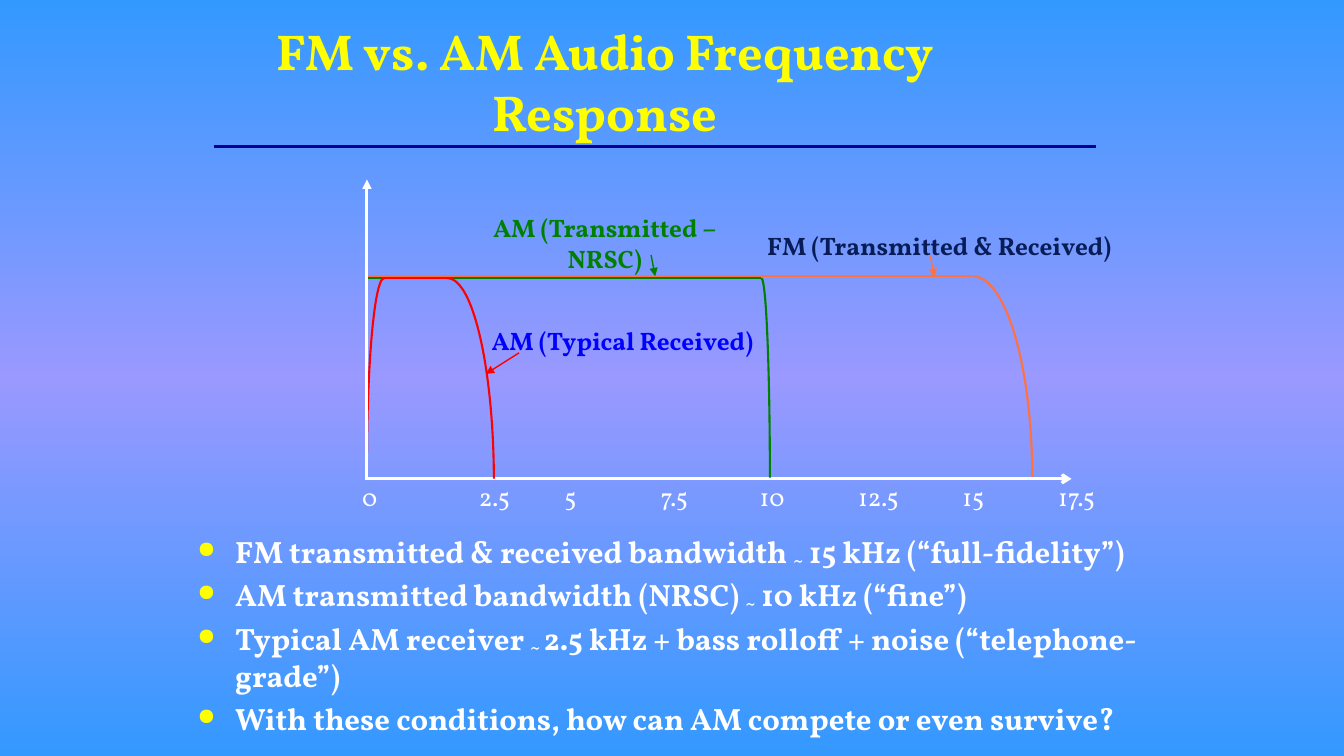
"""Build the slide comparing FM and AM audio frequency response."""
from copy import deepcopy
from dataclasses import dataclass

from lxml.etree import SubElement
from pptx import Presentation
from pptx.dml.color import RGBColor
from pptx.enum.shapes import MSO_CONNECTOR, MSO_SHAPE
from pptx.enum.text import MSO_ANCHOR, MSO_AUTO_SIZE, PP_ALIGN
from pptx.oxml.ns import qn
from pptx.slide import Slide
from pptx.text.text import TextFrame, _Run
from pptx.util import Pt


@dataclass(frozen=True)
class Theme:
    font: str = "Vollkorn"
    title_size: float = 36
    body_size: float = 22
    label_size: float = 18
    edge: str = "3399FF"
    middle: str = "9999FF"
    yellow: str = "FFFF00"
    white: str = "FFFFFF"
    navy: str = "000099"
    ink: str = "081D58"
    blue: str = "0000FF"
    orange: str = "FF7140"
    green: str = "008000"
    red: str = "FF0000"


@dataclass(frozen=True)
class Stroke:
    start: tuple[float, float]
    end: tuple[float, float]
    color: str
    width: float
    head: str = ""
    tail: str = ""


@dataclass(frozen=True)
class Rolloff:
    left: float
    top: float
    width: float
    height: float
    color: str
    flipped: bool = False
    angles: tuple[float, float] = (162, 0)


@dataclass(frozen=True)
class Label:
    text: str
    left: float
    top: float
    width: float
    height: float
    color: str
    size: float = 18
    bold: bool = True
    anchor: MSO_ANCHOR = MSO_ANCHOR.TOP
    grow: bool = True


THEME = Theme()
AXIS_X, AXIS_Y = 262.1, 342
FM_TOP, AM_TOP = 197.3, 198.7

TITLE = Label("FM vs. AM Audio Frequency Response", 118.8, 14.4, 626.4, 90,
              THEME.yellow, THEME.title_size, anchor=MSO_ANCHOR.BOTTOM, grow=False)
BULLETS = (
    ("FM transmitted & received bandwidth ", "~", " 15 kHz (“full-fidelity”)"),
    ("AM transmitted bandwidth (NRSC) ", "~", " 10 kHz (“fine”)"),
    ("Typical AM receiver ", "~ ", "2.5 kHz + bass rolloff + noise (“telephone-grade”)"),
    ("With these conditions, how can AM compete or even survive?",),
)
RULES_AND_BANDS = (
    Stroke((152.6, 104.4), (782.6, 104.4), THEME.navy, 2.25),
    Stroke((AXIS_X, AXIS_Y), (765.4, AXIS_Y), THEME.white, 2.25, tail="arrow"),
    Stroke((AXIS_X, FM_TOP), (694.1, FM_TOP), THEME.orange, 1.5),
    Stroke((AXIS_X, AM_TOP), (543.6, AM_TOP), THEME.green, 1.5),
    Stroke((274.3, AM_TOP), (319.7, AM_TOP), THEME.red, 1.5),
)
ROLLOFFS = (
    Rolloff(652.3, FM_TOP, 85, 286.6, THEME.orange),
    Rolloff(537.8, AM_TOP, 12.2, 285.1, THEME.green),
    Rolloff(AXIS_X, AM_TOP, 24.5, 270.7, THEME.red, flipped=True),
    Rolloff(286.6, AM_TOP, 66.2, 291.6, THEME.red, angles=(162, 213.18)),
)
CURVE_LABELS = (
    Label("FM (Transmitted & Received)", 537.8, 161.3, 266.4, 28.8, THEME.ink),
    Label("AM (Transmitted –NRSC)", 323.3, 148.3, 217.4, 51.1, THEME.green),
    Label("AM (Typical Received)", 342, 229, 205.2, 28.8, THEME.blue),
)
POINTERS = (
    Stroke((465.1, 182.2), (468, FM_TOP), THEME.green, 1, tail="triangle"),
    Stroke((664.6, 182.9), (667.4, 198), THEME.orange, 1, tail="triangle"),
    Stroke((370.8, 252), (347, 267.1), THEME.red, 1, tail="triangle"),
    Stroke((AXIS_X, 128.2), (AXIS_X, 342.7), THEME.white, 2.25, head="triangle"),
)
TICK_WIDTH = 57.6
TICK_CENTERS = {"0": 264.2, "2.5": 353.2, "5": 407.5, "7.5": 481.7,
                "10": 551.5, "12.5": 627.5, "15": 695.2, "17.5": 769}


def paint_background(page: Slide) -> None:
    """Fill the page with a vertical three-stop gradient."""
    fill = page.background.fill
    fill.gradient()
    fill.gradient_angle = 270
    stops = page.element.find(".//" + qn("a:gsLst"))
    stops.insert(1, deepcopy(stops[0]))
    colors = (THEME.edge, THEME.middle, THEME.edge)
    for stop, position, color in zip(fill.gradient_stops, (0, 0.5, 1), colors):
        stop.position = position
        stop.color.rgb = RGBColor.from_string(color)


def style_span(span: _Run, size: float, color: str, bold: bool) -> None:
    """Set the font of one run."""
    span.font.name = THEME.font
    span.font.size = Pt(size)
    span.font.bold = bold
    span.font.color.rgb = RGBColor.from_string(color)


def add_frame(page: Slide, left: float, top: float, width: float, height: float) -> TextFrame:
    """Add a wrapping text box and return its frame."""
    box = page.shapes.add_textbox(Pt(left), Pt(top), Pt(width), Pt(height))
    box.text_frame.word_wrap = True
    return box.text_frame


def draw_label(page: Slide, label: Label) -> None:
    """Draw one centred label."""
    frame = add_frame(page, label.left, label.top, label.width, label.height)
    frame.vertical_anchor = label.anchor
    frame.auto_size = MSO_AUTO_SIZE.SHAPE_TO_FIT_TEXT if label.grow else MSO_AUTO_SIZE.NONE
    frame.text = label.text
    para = frame.paragraphs[0]
    para.alignment = PP_ALIGN.CENTER
    style_span(para.runs[0], label.size, label.color, label.bold)


def draw_bullets(page: Slide) -> None:
    """Draw the bulleted list with lowered tildes."""
    frame = add_frame(page, 133.9, 376.6, 695.5, 130.3)
    for index, pieces in enumerate(BULLETS):
        para = frame.add_paragraph() if index else frame.paragraphs[0]
        if index:
            para.space_before = Pt(0.2 * THEME.body_size)
        properties = para._p.get_or_add_pPr()
        properties.set("marL", str(Pt(27)))
        properties.set("indent", str(Pt(-27)))
        bullet_color = SubElement(properties, qn("a:buClr"))
        SubElement(bullet_color, qn("a:srgbClr"), val=THEME.yellow)
        SubElement(properties, qn("a:buSzPct"), val="75000")
        SubElement(properties, qn("a:buChar"), char="●")
        for piece in pieces:
            span = para.add_run()
            span.text = piece
            style_span(span, THEME.body_size, THEME.white, True)
            if piece.strip() == "~":
                span._r.get_or_add_rPr().set("baseline", "-10000")


def draw_stroke(page: Slide, stroke: Stroke) -> None:
    """Draw one straight line with its arrowheads."""
    points = (Pt(value) for value in stroke.start + stroke.end)
    connector = page.shapes.add_connector(MSO_CONNECTOR.STRAIGHT, *points)
    connector.line.color.rgb = RGBColor.from_string(stroke.color)
    connector.line.width = Pt(stroke.width)
    outline = connector.line._get_or_add_ln()
    for tag, kind in (("a:headEnd", stroke.head), ("a:tailEnd", stroke.tail)):
        if kind:
            SubElement(outline, qn(tag), type=kind)
    SubElement(connector.element.spPr, qn("a:effectLst"))


def draw_rolloff(page: Slide, rolloff: Rolloff) -> None:
    """Draw one arc at the end of a band."""
    arc = page.shapes.add_shape(MSO_SHAPE.ARC, Pt(rolloff.left), Pt(rolloff.top),
                                Pt(rolloff.width), Pt(rolloff.height))
    arc.shadow.inherit = False
    arc.fill.background()
    arc.line.color.rgb = RGBColor.from_string(rolloff.color)
    arc.line.width = Pt(1.5)
    arc.adjustments[0], arc.adjustments[1] = rolloff.angles
    if rolloff.flipped:
        arc.element.spPr.get_or_add_xfrm().set("flipH", "1")


def main() -> None:
    """Build and save the deck."""
    deck = Presentation()
    deck.slide_width, deck.slide_height = Pt(960), Pt(540)
    page = deck.slides.add_slide(deck.slide_layouts[6])
    paint_background(page)
    draw_label(page, TITLE)
    draw_bullets(page)
    for stroke in RULES_AND_BANDS:
        draw_stroke(page, stroke)
    for rolloff in ROLLOFFS:
        draw_rolloff(page, rolloff)
    for label in CURVE_LABELS:
        draw_label(page, label)
    for stroke in POINTERS:
        draw_stroke(page, stroke)
    for text, center in TICK_CENTERS.items():
        draw_label(page, Label(text, center - TICK_WIDTH / 2, 340.6, TICK_WIDTH, 28.8,
                               THEME.white, THEME.label_size, bold=False))
    deck.save("out.pptx")


if __name__ == "__main__":
    main()
